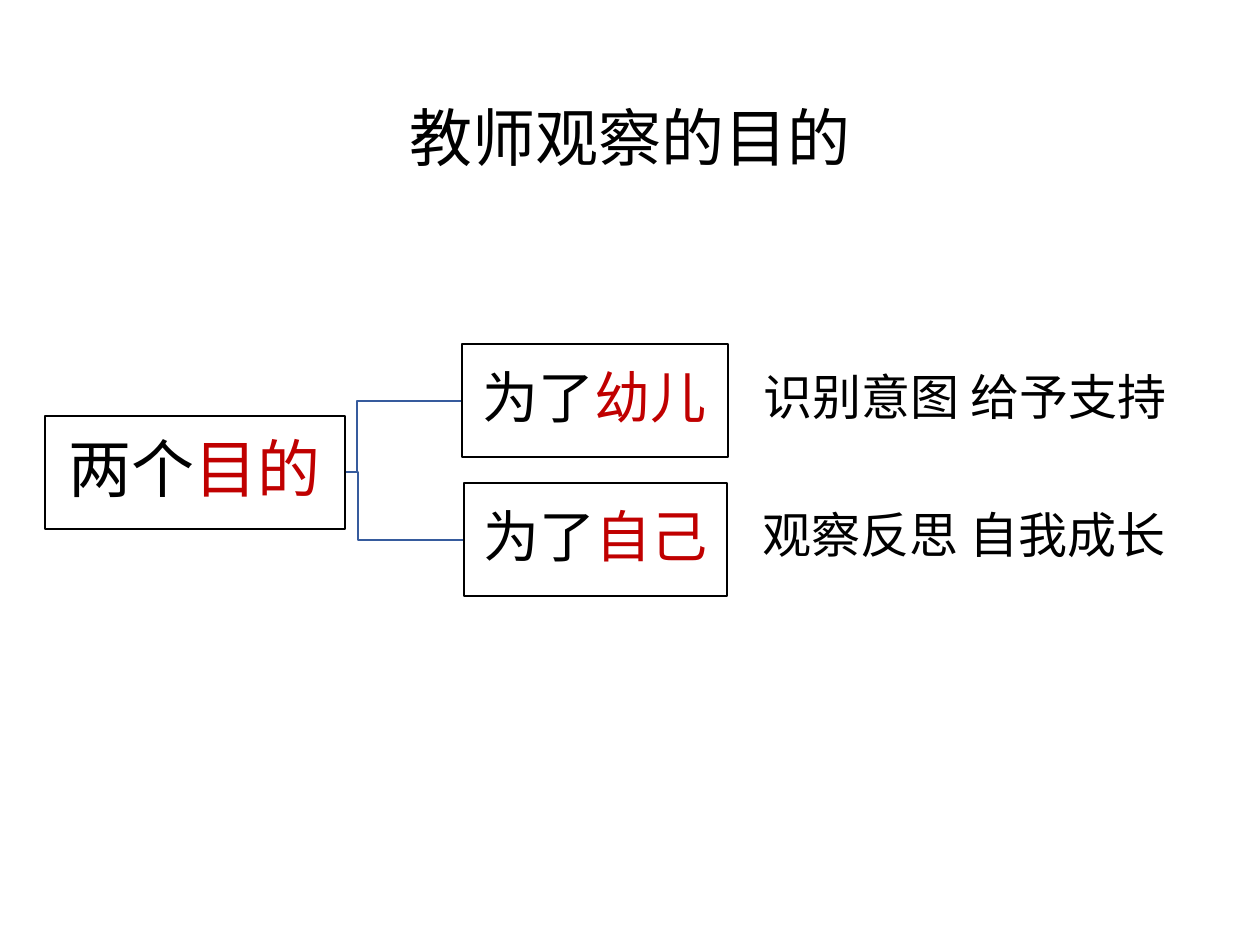
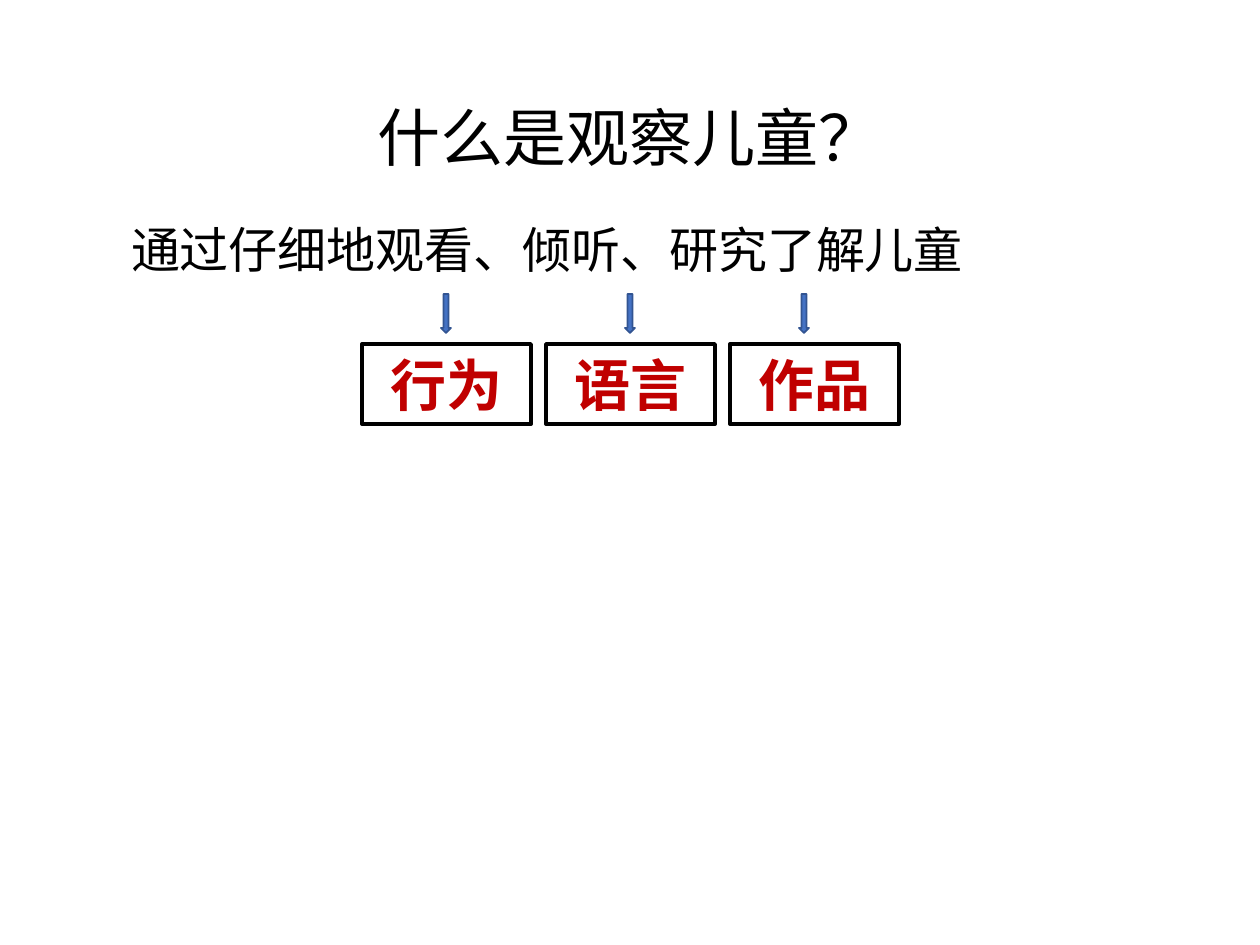
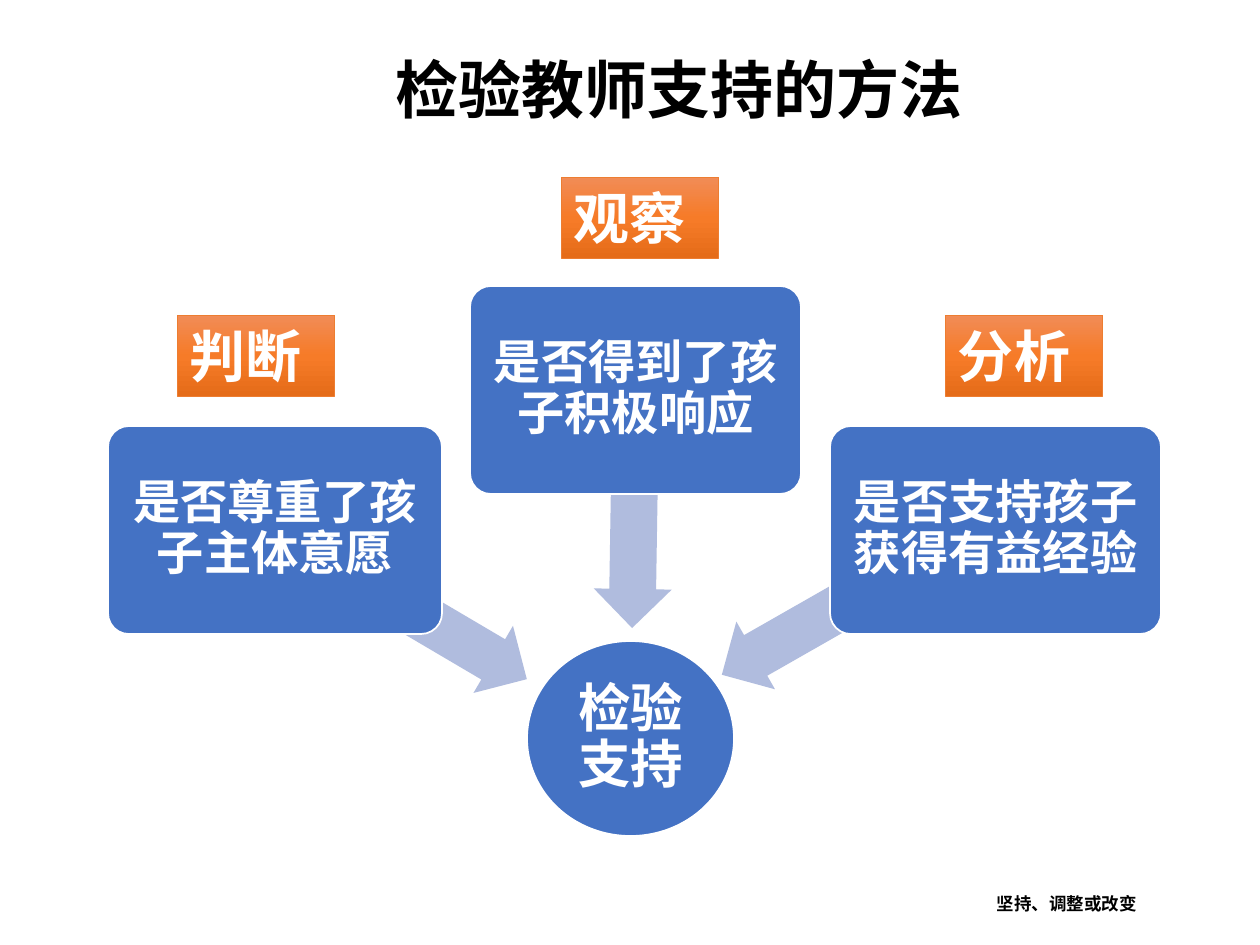
from copy import deepcopy

from lxml import etree
from pptx import Presentation
from pptx import util as u
from pptx.dml.color import RGBColor
from pptx.enum import shapes, text
from pptx.oxml.ns import qn

SCALE = 914400 / 126  # EMU in one px
FONT = "Noto Sans CJK SC"
BLACK, WHITE, RED = "000000", "FFFFFF", "C00000"
BLUE, DARK_BLUE, PALE_BLUE, ELBOW_BLUE = "4472C4", "325491", "B0BCDE", "365B9D"
ORANGE = "ED7D31"
ORANGE_STOPS = [(0, "F18C57"), (0.5, "F67B28"), (1, "E56C19")]
KIND = shapes.MSO_SHAPE
CENTER, LEFT = text.PP_ALIGN.CENTER, text.PP_ALIGN.LEFT
MIDDLE, TOP = text.MSO_ANCHOR.MIDDLE, text.MSO_ANCHOR.TOP


def px(length):
    return u.Emu(round(length * SCALE))


def color(hex_string):
    return RGBColor.from_string(hex_string)


class Deck:
    """Holds the shared style and the current slide."""

    def __init__(self):
        self.deck = Presentation()
        self.deck.slide_width, self.deck.slide_height = px(1260), px(945)
        self.page = None

    def new_page(self):
        self.page = self.deck.slides.add_slide(self.deck.slide_layouts[6])

    def set_text(self, box, spans, size, bold=False, align=CENTER, anchor=MIDDLE,
                 inset=(13, 6), spacing=0.9, font=FONT):
        """Fill a box with one paragraph of (words, colour) spans."""
        frame = box.text_frame
        frame.word_wrap = True
        frame.vertical_anchor = anchor
        frame.margin_left = frame.margin_right = px(inset[0])
        frame.margin_top = frame.margin_bottom = px(inset[1])
        para = frame.paragraphs[0]
        para.alignment, para.line_spacing = align, spacing
        para.font.size, para.font.bold = u.Pt(size), bold
        para.font.color.rgb = color(spans[0][1])
        para.font.name = font
        defaults = para._p.pPr.find(qn("a:defRPr"))
        etree.SubElement(defaults, qn("a:ea")).set("typeface", FONT)
        for words, hue in spans:
            span = para.add_run()
            span.text = words
            if hue != spans[0][1]:
                span.font.color.rgb = color(hue)
        return para

    def label(self, area, words, size, **style):
        box = self.page.shapes.add_textbox(*map(px, area))
        return self.set_text(box, [(words, BLACK)], size, **style)

    def title(self, words, area=(87, 50, 1086, 183), bold=False):
        self.label(area, words, 36, bold=bold)

    def shape(self, kind, area, fill=None, line=None, width=1, turn=0, adjust=()):
        box = self.page.shapes.add_shape(kind, *map(px, area))
        box.shadow.inherit = False
        box.rotation = turn
        for index, value in enumerate(adjust):
            box.adjustments[index] = value
        self.paint(box, fill, line, width)
        return box

    def paint(self, box, fill, line, width):
        if fill:
            box.fill.solid()
            box.fill.fore_color.rgb = color(fill)
        else:
            box.fill.background()
        if line:
            box.line.color.rgb = color(line)
            box.line.width = u.Pt(width)
        else:
            box.line.fill.background()

    def elbow(self, start, end):
        """Draw an open line that bends halfway across."""
        (left, top), (right, bottom) = start, end
        middle = (left + right) / 2
        builder = self.page.shapes.build_freeform(left, top, scale=SCALE)
        builder.add_line_segments([(middle, top), (middle, bottom), end], close=False)
        outline = builder.convert_to_shape()
        outline.shadow.inherit = False
        self.paint(outline, None, ELBOW_BLUE, 1)

    def orange_tag(self, left, top, words):
        box = self.shape(KIND.RECTANGLE, (left, top, 158, 81), line=ORANGE, width=0.5)
        box.fill.gradient()
        box.fill.gradient_angle = 270
        stop_list = box._element.spPr.find(".//" + qn("a:gsLst"))
        stop_list.append(deepcopy(stop_list[0]))
        for stop, (position, hue) in zip(box.fill.gradient_stops, ORANGE_STOPS):
            stop.position = position
            stop.color.rgb = color(hue)
        self.set_text(box, [(words, WHITE)], 32, bold=True, align=LEFT, spacing=1)


def purpose_page(deck):
    deck.new_page()
    deck.title("教师观察的目的")
    # Branches lie behind the boxes
    for end in [(464, 540), (462, 401)]:
        deck.elbow((252, 472), end)
    # Root and its two purposes
    for area, fill, size, start, accent in [
        ((45, 416, 300, 113), WHITE, 36, "两个", "目的"),
        ((462, 344, 266, 113), None, 32, "为了", "幼儿"),
        ((464, 483, 263, 113), None, 32, "为了", "自己"),
    ]:
        box = deck.shape(KIND.RECTANGLE, area, fill, BLACK)
        deck.set_text(box, [(start, BLACK), (accent, RED)], size, inset=(3, 3))
    # What each purpose means
    for left, top, words in [(751, 360, "识别意图 给予支持"), (750, 498, "观察反思 自我成长")]:
        deck.label((left, top, 469, 72), words, 28, align=LEFT, spacing=1)


def meaning_page(deck):
    deck.new_page()
    deck.title("什么是观察儿童？")
    para = deck.label((64, 220, 1150, 232), "通过仔细地观看、倾听、研究了解儿童", 28,
                      align=LEFT, anchor=TOP)
    para._p.pPr.set("marL", str(px(54)))
    # Three things to observe, each under an arrow
    for index, words in enumerate(["行为", "语言", "作品"]):
        box = deck.shape(KIND.RECTANGLE, (362 + 184 * index, 344, 169, 80),
                         line=BLACK, width=2.25)
        deck.set_text(box, [(words, RED)], 32, bold=True, spacing=1)
    for left in (441, 625, 799):
        deck.shape(KIND.DOWN_ARROW, (left, 294, 10, 39), BLUE, DARK_BLUE)


def checking_page(deck):
    deck.new_page()
    deck.title("检验教师支持的方法", (164, 33, 1029, 120), bold=True)
    # Centre circle
    circle = deck.shape(KIND.OVAL, (527, 641, 207, 195), BLUE, WHITE)
    deck.set_text(circle, [("检验支持", WHITE)], 30, bold=True, inset=(3, 3))
    # Questions with their arrows towards the circle
    for arrow, turn, card, question in [
        ((255, 566, 292, 78), 210.5, (108, 426, 334, 208), "是否尊重了孩子主体意愿"),
        ((515, 470, 238, 78), 270.9, (470, 286, 331, 208), "是否得到了孩子积极响应"),
        ((702, 561, 302, 78), 330.3, (830, 426, 331, 208), "是否支持孩子获得有益经验"),
    ]:
        deck.shape(KIND.LEFT_ARROW, arrow, PALE_BLUE, turn=turn, adjust=(0.6, 0.5))
        box = deck.shape(KIND.ROUNDED_RECTANGLE, card, BLUE, WHITE, adjust=(0.1,))
        deck.set_text(box, [(question, WHITE)], 27, bold=True, inset=(8, 8))
    # Tags above the questions
    for left, top, words in [(177, 315, "判断"), (561, 177, "观察"), (945, 315, "分析")]:
        deck.orange_tag(left, top, words)
    deck.label((984, 886, 237, 34), "坚持、调整或改变", 10, bold=True, align=LEFT,
               spacing=1, font="Arial")


def main():
    deck = Deck()
    purpose_page(deck)
    meaning_page(deck)
    checking_page(deck)
    deck.deck.save("out.pptx")


if __name__ == "__main__":
    main()
